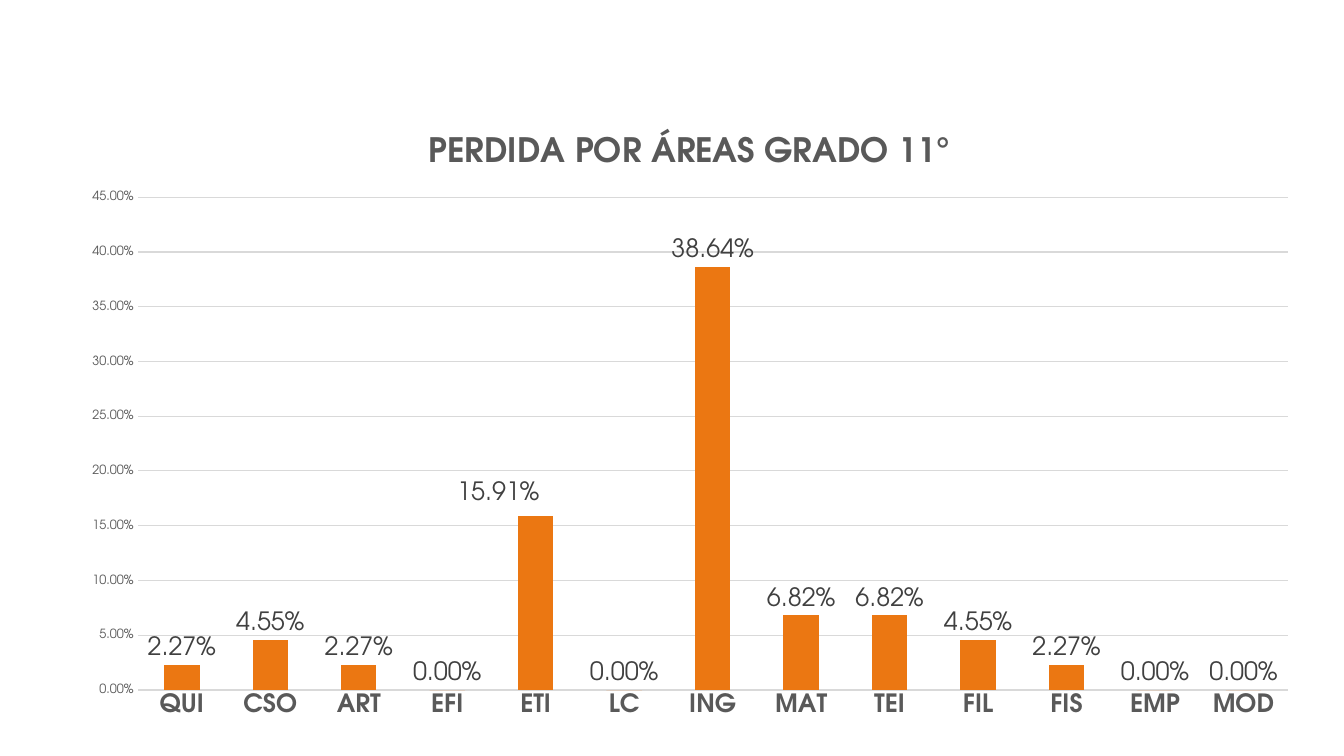
import pptx
import pptx.chart.data
import pptx.dml.color
import pptx.enum.chart
import pptx.oxml
import pptx.oxml.ns
import pptx.util
from pptx.util import Cm

FONT = "TeX Gyre Adventor"
LOSSES = {
    "QUI": 0.0227, "CSO": 0.0455, "ART": 0.0227, "EFI": 0, "ETI": 0.1591,
    "LC": 0, "ING": 0.3864, "MAT": 0.0682, "TEI": 0.0682, "FIL": 0.0455,
    "FIS": 0.0227, "EMP": 0, "MOD": 0,
}


def set_font(font, size, color, bold=False):
    font.name = FONT
    font.size = pptx.util.Pt(size)
    font.bold = bold
    font.color.rgb = pptx.dml.color.RGBColor.from_string(color)


def manual_layout(**settings):
    tags = "".join(f'<c:{tag} val="{value}"/>' for tag, value in settings.items())
    namespace = pptx.oxml.ns.nsdecls("c")
    return pptx.oxml.parse_xml(
        f"<c:layout {namespace}><c:manualLayout>{tags}</c:manualLayout></c:layout>")


presentation = pptx.Presentation()
presentation.slide_width = Cm(33.87)
presentation.slide_height = Cm(19.05)
slide = presentation.slides.add_slide(presentation.slide_layouts[6])

# Column chart
chart_data = pptx.chart.data.CategoryChartData(number_format="0.00%")
chart_data.categories = list(LOSSES)
chart_data.add_series("Series 1", list(LOSSES.values()))
chart = slide.shapes.add_chart(
    pptx.enum.chart.XL_CHART_TYPE.COLUMN_CLUSTERED,
    Cm(1.68), Cm(2.77), Cm(31.37), Cm(15.62), chart_data).chart
chart.has_legend = False
set_font(chart.font, 10, "000000")

# Chart title
chart.has_title = True
chart.chart_title.include_in_layout = False
title_paragraph = chart.chart_title.text_frame.paragraphs[0]
title_paragraph.text = "PERDIDA POR ÁREAS GRADO 11°"
set_font(title_paragraph.font, 24, "595959", bold=True)

# Axes
for axis, size, bold in ((chart.category_axis, 18, True), (chart.value_axis, 9, False)):
    set_font(axis.tick_labels.font, size, "595959", bold)
    axis.major_tick_mark = pptx.enum.chart.XL_TICK_MARK.NONE
    axis.minor_tick_mark = pptx.enum.chart.XL_TICK_MARK.NONE
    axis.format.line.fill.background()
value_axis = chart.value_axis
value_axis.minimum_scale = 0
value_axis.maximum_scale = 0.45
value_axis.major_unit = 0.05
value_axis.tick_labels.number_format = "0.00%"
value_axis.tick_labels.number_format_is_linked = False
gridline = value_axis.major_gridlines.format.line
gridline.width = pptx.util.Pt(0.75)
gridline.color.rgb = pptx.dml.color.RGBColor.from_string("D9D9D9")

# Columns
plot = chart.plots[0]
plot.gap_width = 150
plot.vary_by_categories = False
series = plot.series[0]
series.format.fill.solid()
series.format.fill.fore_color.rgb = pptx.dml.color.RGBColor.from_string("EB7712")

# Value labels, with the ETI label moved up and to the left
outside_end = pptx.enum.chart.XL_LABEL_POSITION.OUTSIDE_END
labels = series.data_labels
labels.show_value = True
labels.number_format = "0.00%"
labels.number_format_is_linked = False
labels.position = outside_end
set_font(labels.font, 18, "404040")
moved_label = series.points[list(LOSSES).index("ETI")].data_label
set_font(moved_label.font, 18, "404040")
moved_label.position = outside_end
label_element = labels._element.find(pptx.oxml.ns.qn("c:dLbl"))
label_element.insert(1, manual_layout(x=-0.03, y=-0.01))

# Plot area within the chart
plot_area = chart._chartSpace.chart.plotArea
for layout in plot_area.findall(pptx.oxml.ns.qn("c:layout")):
    plot_area.remove(layout)
plot_area.insert(0, manual_layout(
    layoutTarget="inner", xMode="edge", yMode="edge", x=0.057, y=0.141, w=0.924, h=0.795))

presentation.save("out.pptx")
